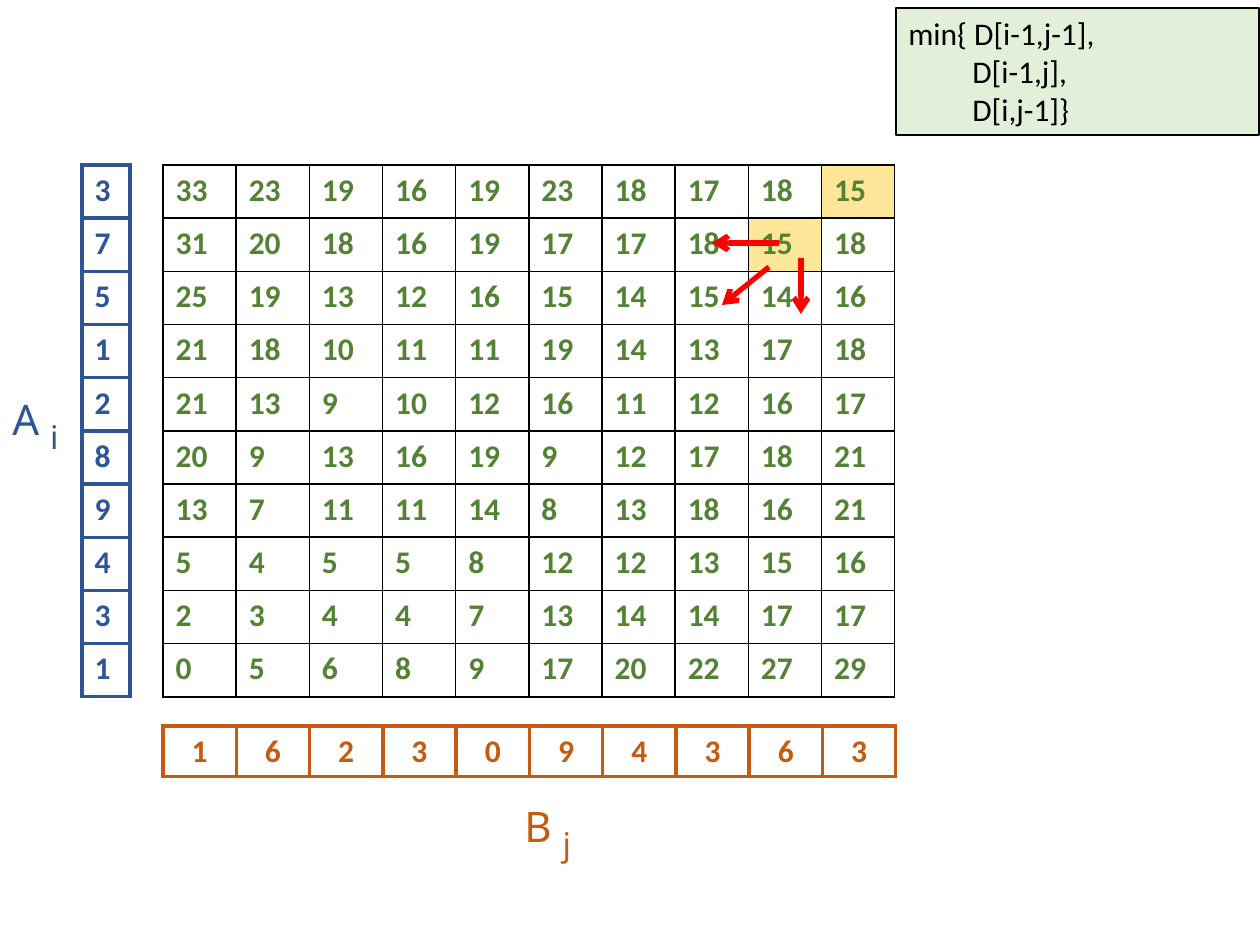
from lxml.etree import SubElement
from pptx import Presentation
from pptx.dml.color import RGBColor
from pptx.enum.shapes import MSO_CONNECTOR, MSO_SHAPE
from pptx.enum.text import MSO_ANCHOR, PP_ALIGN
from pptx.oxml.ns import qn
from pptx.util import Emu, Pt

SCALE = 914400 / 126  # EMU in one px

COLORS = {
    "blue": "2F5597",
    "orange": "C55A11",
    "green": "548235",
    "pale": "E2F0D9",
    "gold": "FFE699",
    "red": "FF0000",
    "black": "000000",
}

SEQ_A = [3, 7, 5, 1, 2, 8, 9, 4, 3, 1]
SEQ_B = [1, 6, 2, 3, 0, 9, 4, 3, 6, 3]
COSTS = [
    [33, 23, 19, 16, 19, 23, 18, 17, 18, 15],
    [31, 20, 18, 16, 19, 17, 17, 18, 15, 18],
    [25, 19, 13, 12, 16, 15, 14, 15, 14, 16],
    [21, 18, 10, 11, 11, 19, 14, 13, 17, 18],
    [21, 13, 9, 10, 12, 16, 11, 12, 16, 17],
    [20, 9, 13, 16, 19, 9, 12, 17, 18, 21],
    [13, 7, 11, 11, 14, 8, 13, 18, 16, 21],
    [5, 4, 5, 5, 8, 12, 12, 13, 15, 16],
    [2, 3, 4, 4, 7, 13, 14, 14, 17, 17],
    [0, 5, 6, 8, 9, 17, 20, 22, 27, 29],
]
WARP = {(0, 9), (1, 8)}  # highlighted steps of the warping path


def px(*nums):
    return [Emu(round(n * SCALE)) for n in nums]


def rgb(name):
    return RGBColor.from_string(COLORS[name])


def write(para, text, *, color, size=18, font="Calibri", bold=False,
          align=PP_ALIGN.LEFT, base=None, indent=0):
    """Add one formatted run to a paragraph."""
    para.alignment = align
    if indent:
        para._p.get_or_add_pPr().set("marL", str(px(indent)[0]))
    run = para.add_run()
    run.text = text
    run.font.size = Pt(size)
    run.font.name = font
    run.font.bold = bold
    run.font.color.rgb = rgb(color)
    if base is not None:
        run._r.get_or_add_rPr().set("baseline", str(base * 1000))


def edge(cell, color, width):
    """Draw all four borders of a cell."""
    props = cell._tc.get_or_add_tcPr()
    for side in ("lnL", "lnR", "lnT", "lnB"):
        line = SubElement(props, qn(f"a:{side}"), w=str(Pt(width)))
        fill = SubElement(line, qn("a:solidFill"))
        SubElement(fill, qn("a:srgbClr"), val=COLORS[color])


def grid(slide, rows, box, *, color, border, width, marks=(),
         align=PP_ALIGN.LEFT):
    """Add a table of bold numbers with equal rows and columns."""
    table = slide.shapes.add_table(len(rows), len(rows[0]), *px(*box)).table
    table.first_row = table.horz_banding = False
    for r, row in enumerate(rows):
        for c, value in enumerate(row):
            cell = table.cell(r, c)
            edge(cell, border, width)
            if (r, c) in marks:
                cell.fill.solid()
                cell.fill.fore_color.rgb = rgb("gold")
            else:
                cell.fill.background()
            write(cell.text_frame.paragraphs[0], str(value),
                  color=color, bold=True, align=align)


def label(slide, name, index, box, color):
    """Add a sequence name with its subscript."""
    frame = slide.shapes.add_textbox(*px(*box)).text_frame
    frame.word_wrap = True
    para = frame.paragraphs[0]
    write(para, name + " ", color=color, size=24, font="Noto Sans")
    write(para, index, color=color, size=32, font="Noto Sans", base=-25)


def panel(slide, lines, box):
    """Add the recurrence box; lines after the first are indented."""
    shape = slide.shapes.add_shape(MSO_SHAPE.RECTANGLE, *px(*box))
    shape.shadow.inherit = False
    shape.fill.solid()
    shape.fill.fore_color.rgb = rgb("pale")
    shape.line.color.rgb = rgb("black")
    shape.line.width = Pt(0.75)
    frame = shape.text_frame
    frame.word_wrap = True
    frame.vertical_anchor = MSO_ANCHOR.TOP
    for i, text in enumerate(lines):
        para = frame.add_paragraph() if i else frame.paragraphs[0]
        write(para, text, color="black", indent=64 if i else 0)


def arrow(group, start, end):
    """Add a red arrow to a group."""
    link = group.shapes.add_connector(
        MSO_CONNECTOR.STRAIGHT, *px(*start, *end))
    link.line.color.rgb = rgb("red")
    link.line.width = Pt(3)
    SubElement(link.line._get_or_add_ln(), qn("a:tailEnd"), type="arrow")
    SubElement(link._element.spPr, qn("a:effectLst"))


def main():
    deck = Presentation()
    deck.slide_width, deck.slide_height = px(1260, 945)
    slide = deck.slides.add_slide(deck.slide_layouts[6])

    # Sequence A on the left
    grid(slide, [[n] for n in SEQ_A], (82, 165, 48, 532),
         color="blue", border="blue", width=2.25)
    label(slide, "A", "i", (0, 373, 84, 63), "blue")

    # Sequence B below
    grid(slide, [SEQ_B], (163, 726, 733, 50), color="orange",
         border="orange", width=2.25, align=PP_ALIGN.CENTER)
    label(slide, "B", "j", (512, 780, 84, 63), "orange")

    # Cost matrix and recurrence
    grid(slide, COSTS, (163, 165, 732, 532), color="green",
         border="black", width=1, marks=WARP)
    panel(slide, ["min{ D[i-1,j-1],", "D[i-1,j],", "D[i,j-1]}"],
          (896, 8, 363, 127))

    # Three candidate steps
    steps = slide.shapes.add_group_shape()
    arrow(steps, (769, 267), (722, 305))
    arrow(steps, (801, 258), (801, 314))
    arrow(steps, (779, 243), (712, 243))

    deck.save("out.pptx")


if __name__ == "__main__":
    main()
